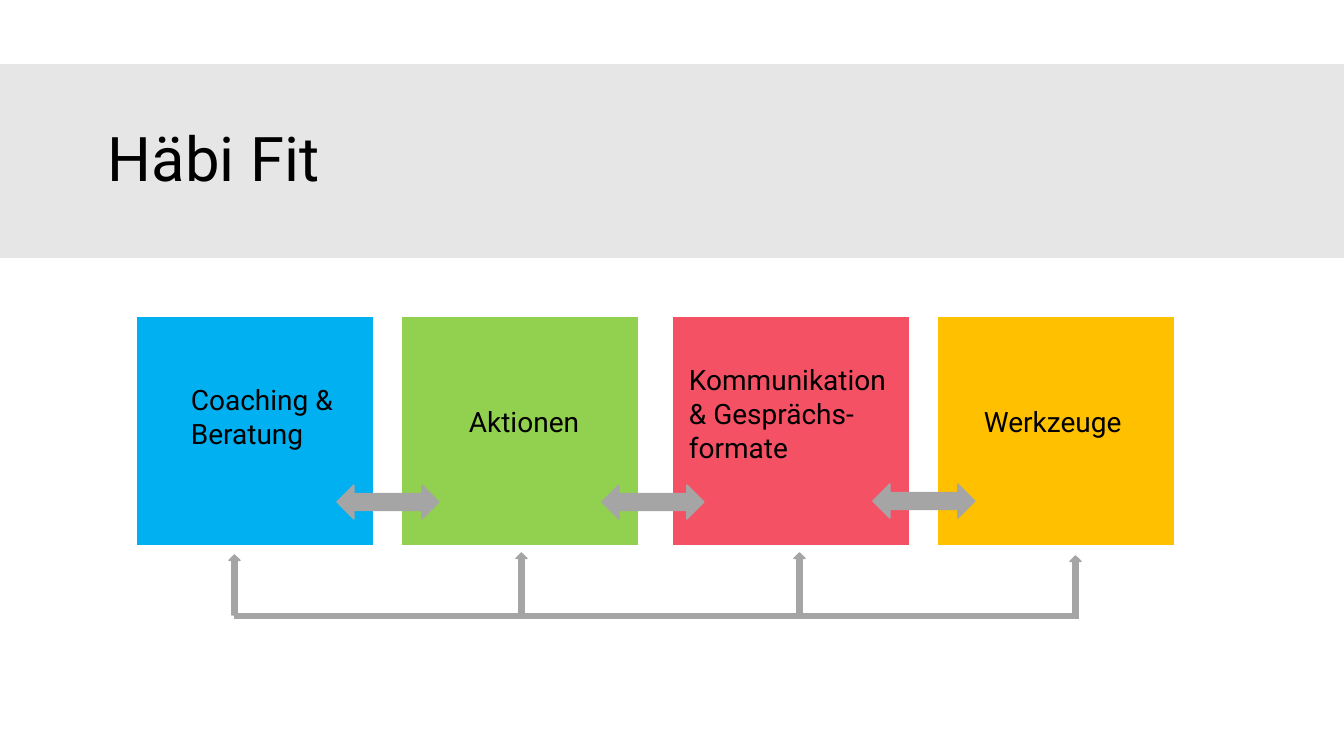
from dataclasses import dataclass

from lxml.etree import SubElement
from pptx import Presentation
from pptx.dml.color import RGBColor
from pptx.enum.shapes import MSO_CONNECTOR as Link, MSO_SHAPE as Form
from pptx.enum.text import MSO_ANCHOR as Anchor, MSO_AUTO_SIZE as Fit, PP_ALIGN as Align
from pptx.oxml.ns import qn
from pptx.util import Emu, Pt


@dataclass(frozen=True)
class Theme:
    font: str = "Roboto"
    ink: str = "000000"
    band: str = "E7E6E6"
    edge: str = "FFFFFF"
    arrow: str = "A5A5A5"
    blue: str = "00B0F0"
    green: str = "92D050"
    red: str = "F55165"
    gold: str = "FFC000"
    head: int = 44
    body: int = 20


@dataclass(frozen=True)
class Area:
    left: int
    top: int
    width: int
    height: int


@dataclass(frozen=True)
class Card:
    left: int
    fill: str
    text: str
    label: Area


theme = Theme()
CARDS = [
    Card(136, theme.blue, "Coaching & Beratung", Area(181, 378, 204, 78)),
    Card(401, theme.green, "Aktionen", Area(459, 400, 135, 44)),
    Card(672, theme.red, "Kommunikation\v& Gesprächs-\vformate", Area(679, 358, 235, 112)),
    Card(937, theme.gold, "Werkzeuge", Area(974, 400, 180, 44)),
]
UP = [Area(229, 555, 11, 60), Area(516, 553, 11, 60),
      Area(794, 553, 11, 60), Area(1070, 556, 11, 60)]
ACROSS = [Area(337, 485, 102, 34), Area(602, 485, 102, 34), Area(873, 484, 102, 34)]


def px(count: int) -> Emu:
    return Emu(round(count * 914400 / 100.8))


def spread(area: Area) -> list[Emu]:
    """Turn an area into left, top, width and height in EMU."""
    return [px(n) for n in (area.left, area.top, area.width, area.height)]


def paint(shape, fill: str, edge: str, width: float) -> None:
    shape.fill.solid()
    shape.fill.fore_color.rgb = RGBColor.from_string(fill)
    shape.line.color.rgb = RGBColor.from_string(edge)
    shape.line.width = Pt(width)


def write(frame, text: str, size: int) -> None:
    frame.text = text
    frame.word_wrap = True
    frame.auto_size = Fit.NONE
    for part in frame.paragraphs:
        part.alignment = Align.LEFT
        for run in part.runs:
            run.font.name = theme.font
            run.font.size = Pt(size)
            run.font.color.rgb = RGBColor.from_string(theme.ink)


def add_form(slide, form: Form, area: Area, fill: str, edge: str, width: float) -> None:
    shape = slide.shapes.add_shape(form, *spread(area))
    shape.shadow.inherit = False
    paint(shape, fill, edge, width)


def add_title(slide) -> None:
    title = slide.shapes.title
    title.left, title.top, title.width, title.height = spread(Area(0, 65, 1344, 193))
    paint(title, theme.band, theme.band, 0.75)
    frame = title.text_frame
    write(frame, "Häbi Fit", theme.head)
    frame.margin_left = px(108)
    frame.vertical_anchor = Anchor.MIDDLE
    frame.paragraphs[0].line_spacing = 0.9


def add_card(slide, card: Card) -> None:
    area = Area(card.left, 316, 238, 230)
    add_form(slide, Form.RECTANGLE, area, card.fill, theme.edge, 1.5)
    label = slide.shapes.add_textbox(*spread(card.label))
    write(label.text_frame, card.text, theme.body)


def add_rail(slide) -> None:
    """Draw the line that joins the upward arrows."""
    rail = slide.shapes.add_connector(Link.STRAIGHT, px(234), px(616), px(1079), px(616))
    rail.line.color.rgb = RGBColor.from_string(theme.arrow)
    rail.line.width = Pt(4.5)
    SubElement(rail._element.spPr, qn("a:effectLst"))


def main() -> None:
    deck = Presentation()
    deck.slide_width, deck.slide_height = px(1344), px(756)
    slide = deck.slides.add_slide(deck.slide_layouts[5])
    add_title(slide)
    for card in reversed(CARDS):
        add_card(slide, card)
    add_rail(slide)
    for form, areas in ((Form.UP_ARROW, UP), (Form.LEFT_RIGHT_ARROW, ACROSS)):
        for area in areas:
            add_form(slide, form, area, theme.arrow, theme.arrow, 1)
    deck.save("out.pptx")


if __name__ == "__main__":
    main()
